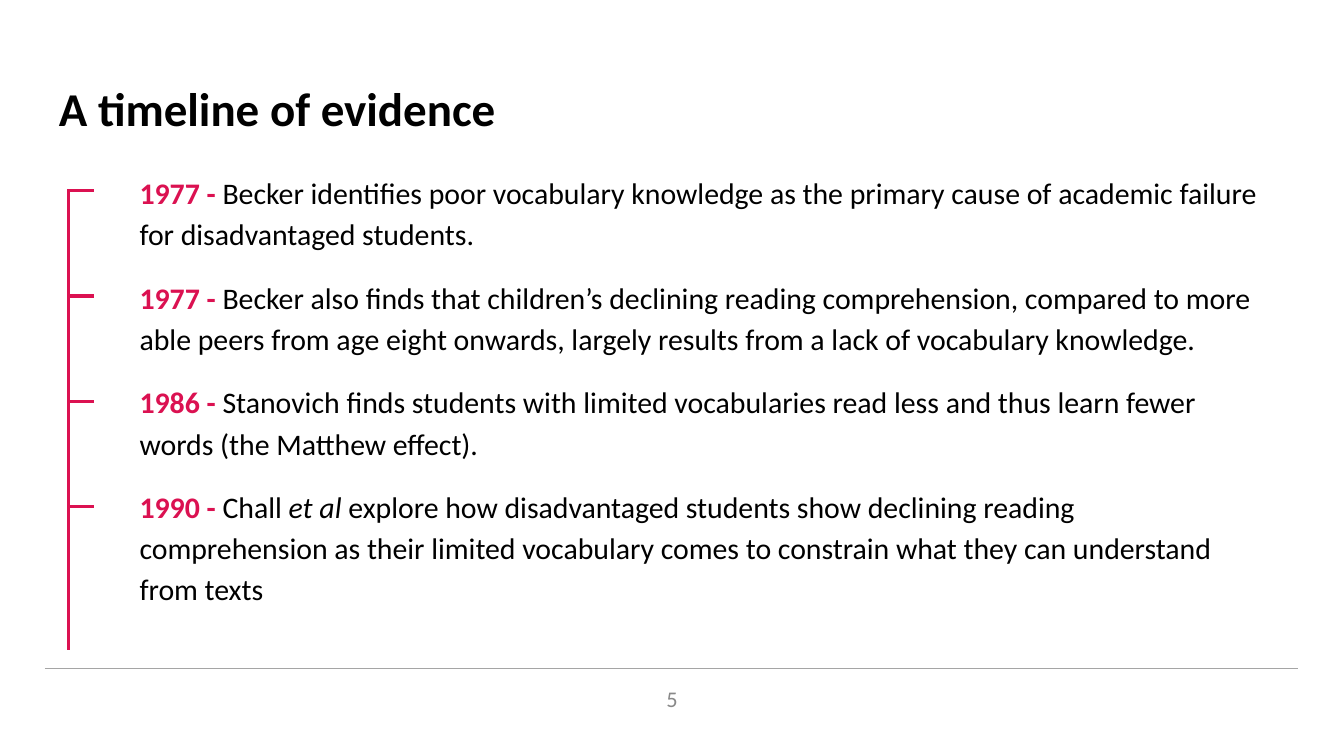
import pptx
import pptx.dml.color
import pptx.enum.shapes
import pptx.enum.text
import pptx.util
from lxml import etree
from pptx.oxml.ns import qn

Pt = pptx.util.Pt
RGBColor = pptx.dml.color.RGBColor
PP_ALIGN = pptx.enum.text.PP_ALIGN
MSO_ANCHOR = pptx.enum.text.MSO_ANCHOR

BLACK = RGBColor(0x00, 0x00, 0x00)
CRIMSON = RGBColor(0xDB, 0x11, 0x51)
RULE_GREY = RGBColor(0xA5, 0xA5, 0xA5)
NUMBER_GREY = RGBColor(0x89, 0x89, 0x89)

EVIDENCE = [
    ("1977", ["Becker identifies poor vocabulary knowledge as the primary cause of "
              "academic failure for disadvantaged students."]),
    ("1977", ["Becker also finds that children’s declining reading comprehension, "
              "compared to more able peers from age eight onwards, largely results "
              "from a lack of vocabulary knowledge."]),
    ("1986", ["Stanovich finds students with limited vocabularies read less and thus "
              "learn fewer words (the Matthew effect)."]),
    ("1990", ["Chall ", "et al ",
              "explore how disadvantaged students show declining reading comprehension "
              "as their limited vocabulary comes to constrain what they can understand "
              "from texts"]),
]

deck = pptx.Presentation()
deck.slide_width = Pt(720)
deck.slide_height = Pt(405)
slide = deck.slides.add_slide(deck.slide_layouts[6])


def add_text(paragraphs, left, top, width, height, *, size, inset=7.2,
             anchor=MSO_ANCHOR.TOP, align=PP_ALIGN.LEFT, line_spacing=1.0, gap=0):
    """Write paragraphs, each a list of (text, colour, bold, italic) runs, in a box."""
    frame = slide.shapes.add_textbox(Pt(left), Pt(top), Pt(width), Pt(height)).text_frame
    frame.word_wrap = True
    frame.vertical_anchor = anchor
    frame.margin_left = frame.margin_right = Pt(7.2)
    frame.margin_top = frame.margin_bottom = Pt(inset)
    for index, runs in enumerate(paragraphs):
        paragraph = frame.add_paragraph() if index else frame.paragraphs[0]
        paragraph.alignment = align
        paragraph.line_spacing = line_spacing
        paragraph.space_before = Pt(gap if index else 0)
        for text, colour, bold, italic in runs:
            run = paragraph.add_run()
            run.text = text
            run.font.name = "Calibri"
            run.font.size = Pt(size)
            run.font.color.rgb = colour
            run.font.bold = bold
            run.font.italic = italic


def add_line(x1, y1, x2, y2, colour, weight):
    line = slide.shapes.add_connector(
        pptx.enum.shapes.MSO_CONNECTOR.STRAIGHT, Pt(x1), Pt(y1), Pt(x2), Pt(y2))
    line.line.color.rgb = colour
    line.line.width = Pt(weight)
    etree.SubElement(line._element.spPr, qn("a:effectLst"))


# Footer
add_text([[("5", NUMBER_GREY, False, False)]], 276, 360, 168, 28.8,
         size=12, inset=3.6, anchor=MSO_ANCHOR.MIDDLE, align=PP_ALIGN.CENTER)
add_line(24, 358, 695.5, 358, RULE_GREY, 0.75)

# Title
add_text([[("A timeline of evidence", BLACK, True, False)]],
         24.5, 35.3, 671, 45.4, size=25.2)

# Dated findings
findings = []
for year, pieces in EVIDENCE:
    runs = [(f"{year} - ", CRIMSON, True, False)]
    runs += [(piece, BLACK, False, piece == "et al ") for piece in pieces]
    findings.append(runs)
add_text(findings, 67.7, 83.5, 617.8, 265, size=16, line_spacing=1.15, gap=12)

# Timeline with one tick per finding
add_line(36.7, 101.5, 36.7, 348.5, CRIMSON, 1.5)
for index in range(len(EVIDENCE)):
    tick_y = 102.2 + 56.45 * index
    add_line(36, tick_y, 50.4, tick_y, CRIMSON, 1.75)

deck.save("out.pptx")
